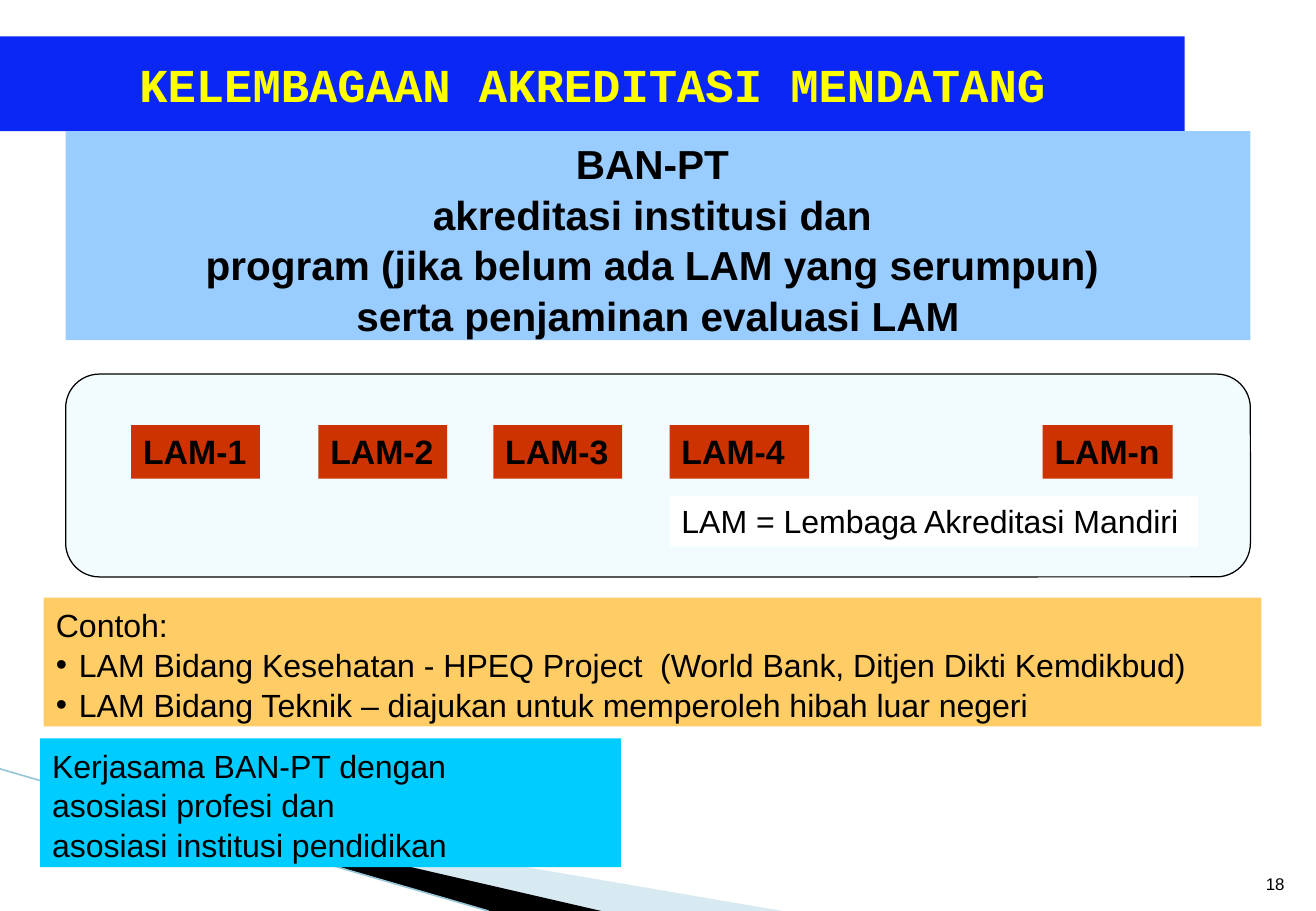
import pptx
import pptx.util
import pptx.dml.color
import pptx.enum.shapes
import pptx.enum.text
import pptx.oxml
import pptx.oxml.ns
import lxml.etree

PX = 9144  # 100 px to the inch
THEME = {
    "banner": "0B27F5", "banner_text": "FFFF00", "text": "000000",
    "board": "99CCFF", "group": "F2FBFD", "agency": "CC3300", "legend": "FFFFFF",
    "examples": "FFCC66", "partners": "00CCFF",
    "wave_light": "9FCBDC", "wave_dark": "000000", "wave_line": "97C5D8",
    "font": "Arial", "title_font": "Courier New",
    "title_size": 28, "board_size": 24, "agency_size": 20, "body_size": 19, "number_size": 10,
}
ALIGN = pptx.enum.text.PP_ALIGN
ANCHOR = pptx.enum.text.MSO_ANCHOR


def paint(target, color):
    target.fill.solid()
    target.fill.fore_color.rgb = pptx.dml.color.RGBColor.from_string(THEME[color])


def write(box, place, lines, size, fill=None, bold=False, align=ALIGN.LEFT, anchor=ANCHOR.TOP,
          font="font", color="text", bullets_from=None, wrap=True, spacing=1.0):
    """Place a box, fill it and set its lines of text."""
    box.left, box.top, box.width, box.height = (value * PX for value in place)
    if fill:
        paint(box, fill)
    frame = box.text_frame
    frame.auto_size = pptx.enum.text.MSO_AUTO_SIZE.NONE
    frame.word_wrap = wrap
    frame.vertical_anchor = anchor
    for index, line in enumerate(lines):
        para = frame.paragraphs[0] if index == 0 else frame.add_paragraph()
        para.alignment = align
        para.space_before = pptx.util.Pt(0)
        para.line_spacing = spacing
        if bullets_from is not None:
            props = para._p.get_or_add_pPr()
            bulleted = index >= bullets_from
            props.set("marL", str(19 * PX if bulleted else 0))
            props.set("indent", str(-19 * PX if bulleted else 0))
            tag = "a:buChar" if bulleted else "a:buNone"
            bullet = lxml.etree.SubElement(props, pptx.oxml.ns.qn(tag))
            if bulleted:
                bullet.set("char", "•")
        span = para.add_run()
        span.text = line
        span.font.name = THEME[font]
        span.font.size = pptx.util.Pt(THEME[size])
        span.font.bold = bold
        span.font.color.rgb = pptx.dml.color.RGBColor.from_string(THEME[color])


deck = pptx.Presentation()
deck.slide_width, deck.slide_height = 1083 * PX, 750 * PX
page = deck.slides.add_slide(deck.slide_layouts[1])
shapes = page.shapes

# Title
write(shapes.title, (0, 30, 975, 78), ["KELEMBAGAAN AKREDITASI MENDATANG"], "title_size",
      fill="banner", bold=True, align=ALIGN.CENTER, anchor=ANCHOR.MIDDLE,
      font="title_font", color="banner_text")

# Decorative waves in the lower left corner
waves = [
    ("wave_light", 40, [(59, 650), (644, 750), (494, 750)]),
    ("wave_dark", 100, [(57, 649), (495, 750), (403, 750)]),
]
for color, opacity, points in waves:
    builder = shapes.build_freeform(*points[0], scale=PX)
    builder.add_line_segments(points[1:], close=True)
    wave = builder.convert_to_shape()
    wave.shadow.inherit = False
    paint(wave, color)
    wave.line.fill.background()
    if opacity < 100:
        tint = wave._element.spPr.find(".//" + pptx.oxml.ns.qn("a:srgbClr"))
        alpha = lxml.etree.SubElement(tint, pptx.oxml.ns.qn("a:alpha"))
        alpha.set("val", str(opacity * 1000))

edge = shapes.add_connector(pptx.enum.shapes.MSO_CONNECTOR.STRAIGHT,
                            0, 633 * PX, 402 * PX, 750 * PX)
edge.line.width = pptx.util.Pt(0.95)
edge.line.color.rgb = pptx.dml.color.RGBColor.from_string(THEME["wave_line"])
lxml.etree.SubElement(edge._element.spPr, pptx.oxml.ns.qn("a:effectLst"))

# Frame around the independent agencies
group = shapes.add_shape(pptx.enum.shapes.MSO_SHAPE.ROUNDED_RECTANGLE,
                         54 * PX, 308 * PX, 975 * PX, 167 * PX)
group.shadow.inherit = False
paint(group, "group")
group.line.width = pptx.util.Pt(0.75)
group.line.color.rgb = pptx.dml.color.RGBColor.from_string(THEME["text"])

# Agencies
agencies = [("LAM-1", 108, 106), ("LAM-2", 262, 106), ("LAM-3", 406, 106),
            ("LAM-4", 551, 115), ("LAM-n", 858, 107)]
for name, left, width in agencies:
    write(shapes.add_textbox(0, 0, 0, 0), (left, 350, width, 44), [name], "agency_size",
          fill="agency", bold=True, wrap=False)

write(shapes.add_textbox(0, 0, 0, 0), (551, 408, 435, 42),
      ["LAM = Lembaga Akreditasi Mandiri"], "body_size", fill="legend", wrap=False)

# Examples
write(page.placeholders[1], (36, 492, 1002, 106), [
    "Contoh:",
    "LAM Bidang Kesehatan - HPEQ Project  (World Bank, Ditjen Dikti Kemdikbud)",
    "LAM Bidang Teknik – diajukan untuk memperoleh hibah luar negeri",
], "body_size", fill="examples", bullets_from=1, spacing=1.04)

# National board
write(shapes.add_textbox(0, 0, 0, 0), (54, 108, 975, 172), [
    "BAN-PT ",
    "akreditasi institusi dan ",
    "program (jika belum ada LAM yang serumpun) ",
    "serta penjaminan evaluasi LAM",
], "board_size", fill="board", bold=True, align=ALIGN.CENTER, spacing=1.04)

# Partners
write(shapes.add_textbox(0, 0, 0, 0), (33, 608, 478, 106), [
    "Kerjasama BAN-PT dengan",
    "asosiasi profesi dan",
    "asosiasi institusi pendidikan",
], "body_size", fill="partners", spacing=1.04)

# Page number
write(shapes.add_textbox(0, 0, 0, 0), (1024, 701, 43, 40), ["18"], "number_size",
      align=ALIGN.RIGHT, anchor=ANCHOR.BOTTOM)

deck.save("out.pptx")
